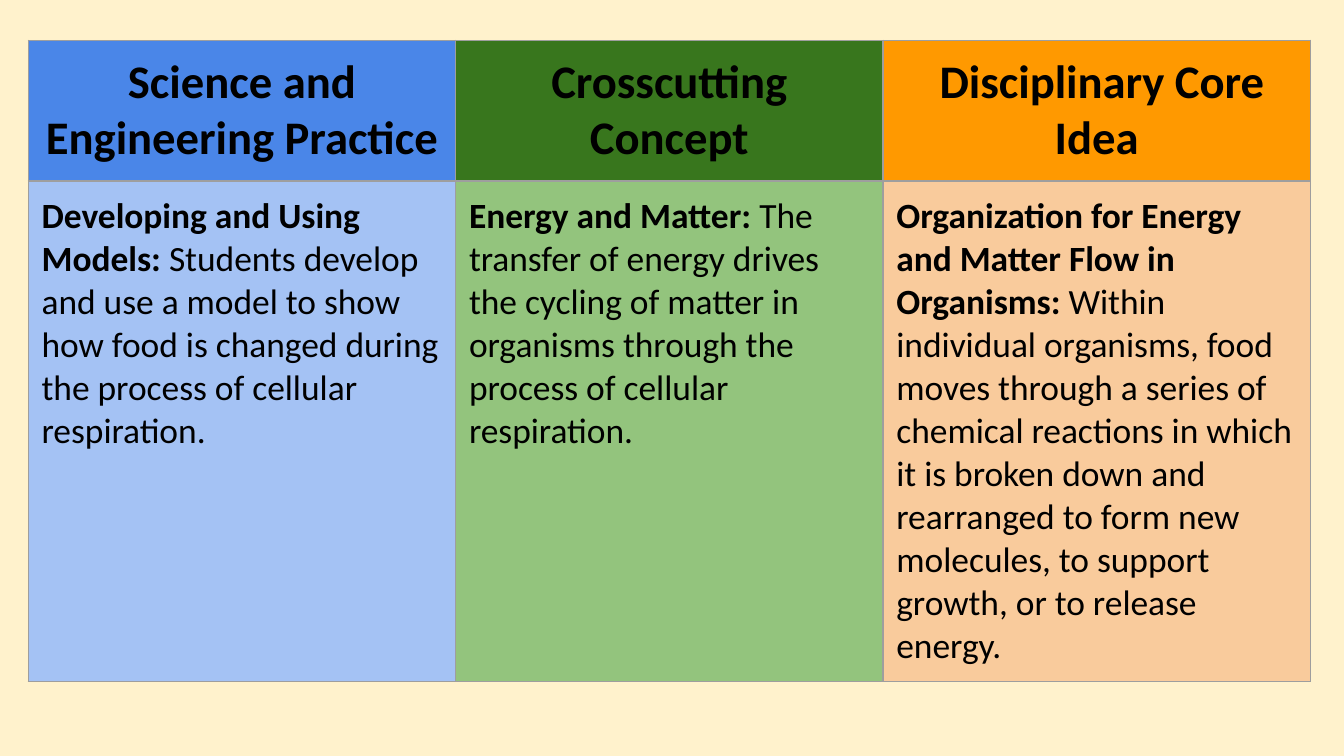
from lxml.etree import SubElement
from pptx import Presentation
from pptx.dml.color import RGBColor
from pptx.enum.text import PP_ALIGN as Align
from pptx.oxml.ns import qn
from pptx.util import Inches, Pt

COLORS = {
    "background": "FFF2CC",
    "text": "000000",
    "border": "9E9E9E",
    "practice": "4A86E8",
    "practice_light": "A4C2F4",
    "concept": "38761D",
    "concept_light": "93C47D",
    "idea": "FF9900",
    "idea_light": "F9CB9C",
}

# Color name, heading runs, body runs; each run is (text, bold).
DIMENSIONS = [
    ("practice",
     [("Science and Engineering Practice ", True)],
     [("Developing and Using Models: ", True),
      ("Students develop and use a model to show how food is changed during "
       "the process of cellular respiration.", False)]),
    ("concept",
     [("Crosscutting Concept", True)],
     [("Energy and Matter: ", True),
      ("The transfer of energy drives the cycling of matter in organisms "
       "through the process of cellular respiration.", False)]),
    ("idea",
     [(" ", False), ("Disciplinary Core Idea", True)],
     [("Organization for Energy and Matter Flow in Organisms: ", True),
      ("Within individual organisms, food moves through a series of chemical "
       "reactions in which it is broken down and rearranged to form new "
       "molecules, to support growth, or to release energy.", False)]),
]


def rgb(name):
    return RGBColor.from_string(COLORS[name])


def write_runs(paragraph, runs, font="Calibri", size=19, color="text", align=Align.LEFT):
    paragraph.alignment = align
    for text, bold in runs:
        run = paragraph.add_run()
        run.text = text
        run.font.name = font
        run.font.size = Pt(size)
        run.font.bold = bold
        run.font.color.rgb = rgb(color)


class SlideBuilder:
    def __init__(self, slide, border_width=0.75, cell_margin=0.1):
        self.slide = slide
        self.border_width = border_width
        self.cell_margin = cell_margin

    def background(self, color):
        fill = self.slide.background.fill
        fill.solid()
        fill.fore_color.rgb = rgb(color)

    def table(self, left, top, height, column_widths, row_heights):
        """Row heights are minimums: rows grow to fit their text."""
        shape = self.slide.shapes.add_table(
            len(row_heights), len(column_widths), Inches(left), Inches(top),
            Inches(sum(column_widths)), Inches(height))
        table = shape.table
        for column, width in zip(table.columns, column_widths):
            column.width = Inches(width)
        for row, row_height in zip(table.rows, row_heights):
            row.height = Inches(row_height)
        shape.height = Inches(height)
        return table

    def cell(self, cell, runs, fill, **text_format):
        margin = Inches(self.cell_margin)
        cell.margin_left = cell.margin_right = margin
        cell.margin_top = cell.margin_bottom = margin
        self.borders(cell)
        cell.fill.solid()
        cell.fill.fore_color.rgb = rgb(fill)
        write_runs(cell.text_frame.paragraphs[0], runs, **text_format)

    def borders(self, cell):
        """Outline all four sides; must run before the fill is set."""
        properties = cell._tc.get_or_add_tcPr()
        for side in ("a:lnL", "a:lnR", "a:lnT", "a:lnB"):
            line = SubElement(properties, qn(side), w=str(Pt(self.border_width)))
            solid_fill = SubElement(line, qn("a:solidFill"))
            SubElement(solid_fill, qn("a:srgbClr"), val=COLORS["border"])


def main():
    presentation = Presentation()
    presentation.slide_width = Inches(10)
    presentation.slide_height = Inches(10 * 9 / 16)
    builder = SlideBuilder(presentation.slides.add_slide(presentation.slide_layouts[6]))
    builder.background("background")

    table = builder.table(0.21, 0.3, 4.72, [3.18] * len(DIMENSIONS), [0.42] * 2)
    for column, (color, heading, body) in enumerate(DIMENSIONS):
        builder.cell(table.cell(0, column), heading, color, size=25, align=Align.CENTER)
        builder.cell(table.cell(1, column), body, f"{color}_light")

    presentation.save("out.pptx")


if __name__ == "__main__":
    main()
